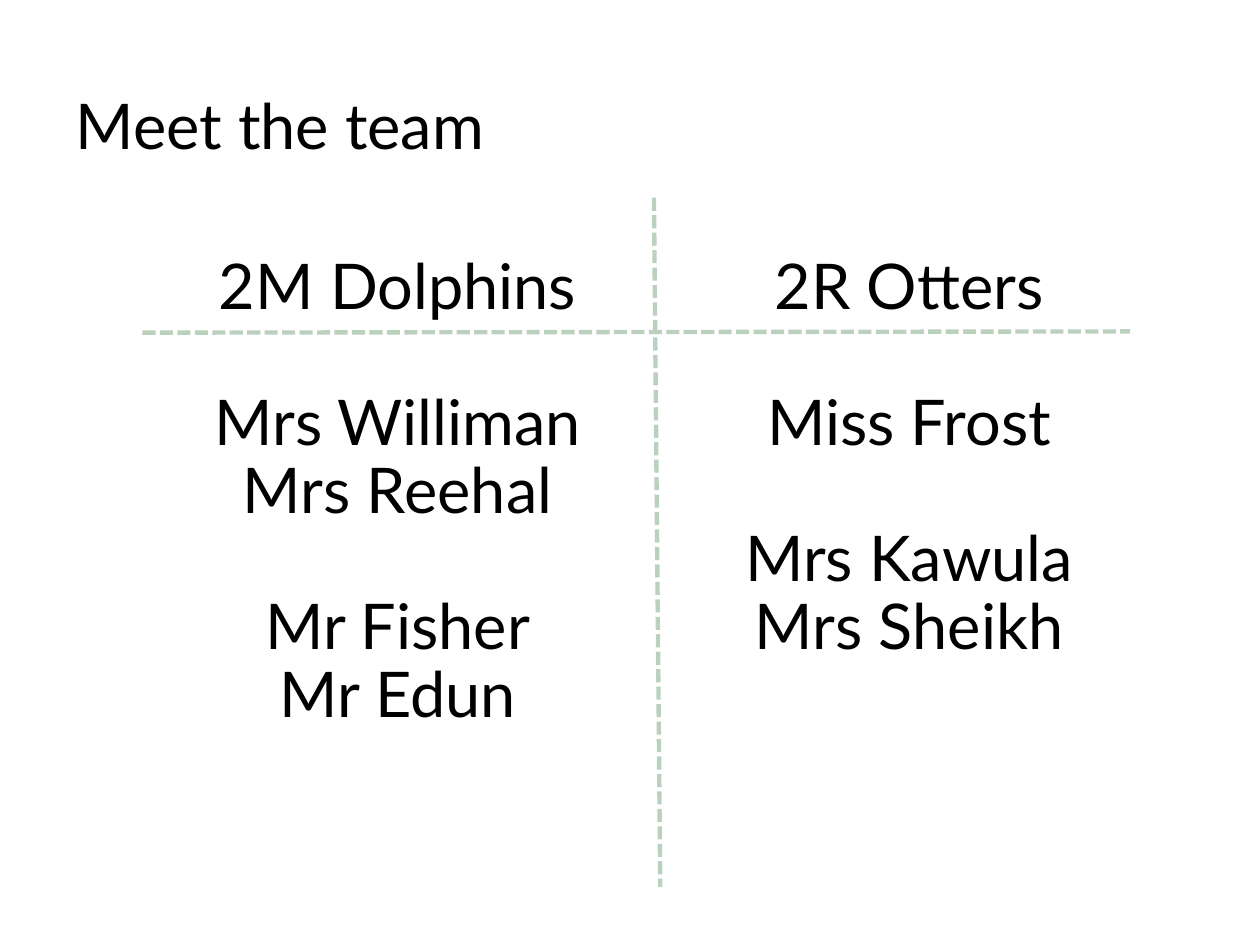
from lxml.etree import SubElement
from pptx import Presentation
from pptx.dml.color import RGBColor
from pptx.enum.dml import MSO_LINE
from pptx.enum.shapes import MSO_CONNECTOR, MSO_SHAPE
from pptx.enum.text import MSO_ANCHOR, MSO_AUTO_SIZE, PP_ALIGN
from pptx.oxml.ns import qn
from pptx.util import Pt

BLACK = RGBColor(0x00, 0x00, 0x00)
GREEN = RGBColor(0xBA, 0xD1, 0xBE)
FONT = "Lato"
SIZE = 36
GAP = 38.9  # one line of text at 90 % spacing
ROUND = 0.096

LEFT, MID, TOP, WIDE = 81.4, 373.7, 133.9, 291.6
DOLPHINS = [["2M Dolphins"], ["Mrs Williman", "Mrs Reehal"],
            ["Mr Fisher", "Mr Edun"]]
OTTERS = [["2R Otters"], ["Miss Frost"], ["Mrs Kawula", "Mrs Sheikh"]]


def add_run(para, text):
    para.line_spacing = 0.9
    run = para.add_run()
    run.text = text
    run.font.name = FONT
    run.font.size = Pt(SIZE)
    run.font.color.rgb = BLACK


def set_title(slide, box, text):
    title = slide.shapes.title
    title.left, title.top, title.width, title.height = map(Pt, box)
    geom = SubElement(title._element.spPr, qn("a:prstGeom"), prst="roundRect")
    SubElement(SubElement(geom, qn("a:avLst")), qn("a:gd"), name="adj",
               fmla=f"val {ROUND * 100000:.0f}")
    frame = title.text_frame
    frame.auto_size = MSO_AUTO_SIZE.NONE
    frame.vertical_anchor = MSO_ANCHOR.MIDDLE
    para = frame.paragraphs[0]
    para.alignment = PP_ALIGN.LEFT
    add_run(para, text)


def add_team(slide, box, groups):
    """Centre the names in the box, with a line's gap between groups."""
    card = slide.shapes.add_shape(MSO_SHAPE.ROUNDED_RECTANGLE, *map(Pt, box))
    card.adjustments[0] = ROUND
    card.shadow.inherit = False
    card.fill.background()
    card.line.fill.background()
    frame = card.text_frame
    frame.word_wrap = True
    frame.vertical_anchor = MSO_ANCHOR.TOP
    for i, group in enumerate(groups):
        for j, name in enumerate(group):
            first = i == j == 0
            para = frame.paragraphs[0] if first else frame.add_paragraph()
            para.alignment = PP_ALIGN.CENTER
            para.space_before = Pt(GAP if i and j == 0 else 0)
            add_run(para, name)


def add_rule(slide, *ends):
    rule = slide.shapes.add_connector(MSO_CONNECTOR.STRAIGHT, *map(Pt, ends))
    rule.line.color.rgb = GREEN
    rule.line.width = Pt(2.5)
    rule.line.dash_style = MSO_LINE.SQUARE_DOT
    SubElement(rule._element.spPr, qn("a:effectLst"))


def main():
    deck = Presentation()
    deck.slide_width, deck.slide_height = Pt(720), Pt(540)
    slide = deck.slides.add_slide(deck.slide_layouts[5])
    set_title(slide, (36, 34.6, 647.3, 78.5), "Meet the team")
    add_rule(slide, MID, 113, 377.3, 506.9)
    add_team(slide, (LEFT, TOP, WIDE, 289.4), DOLPHINS)
    add_rule(slide, LEFT, 190.1, 645.8, 189.4)
    add_team(slide, (MID, TOP, WIDE, 373), OTTERS)
    deck.save("out.pptx")


if __name__ == "__main__":
    main()
